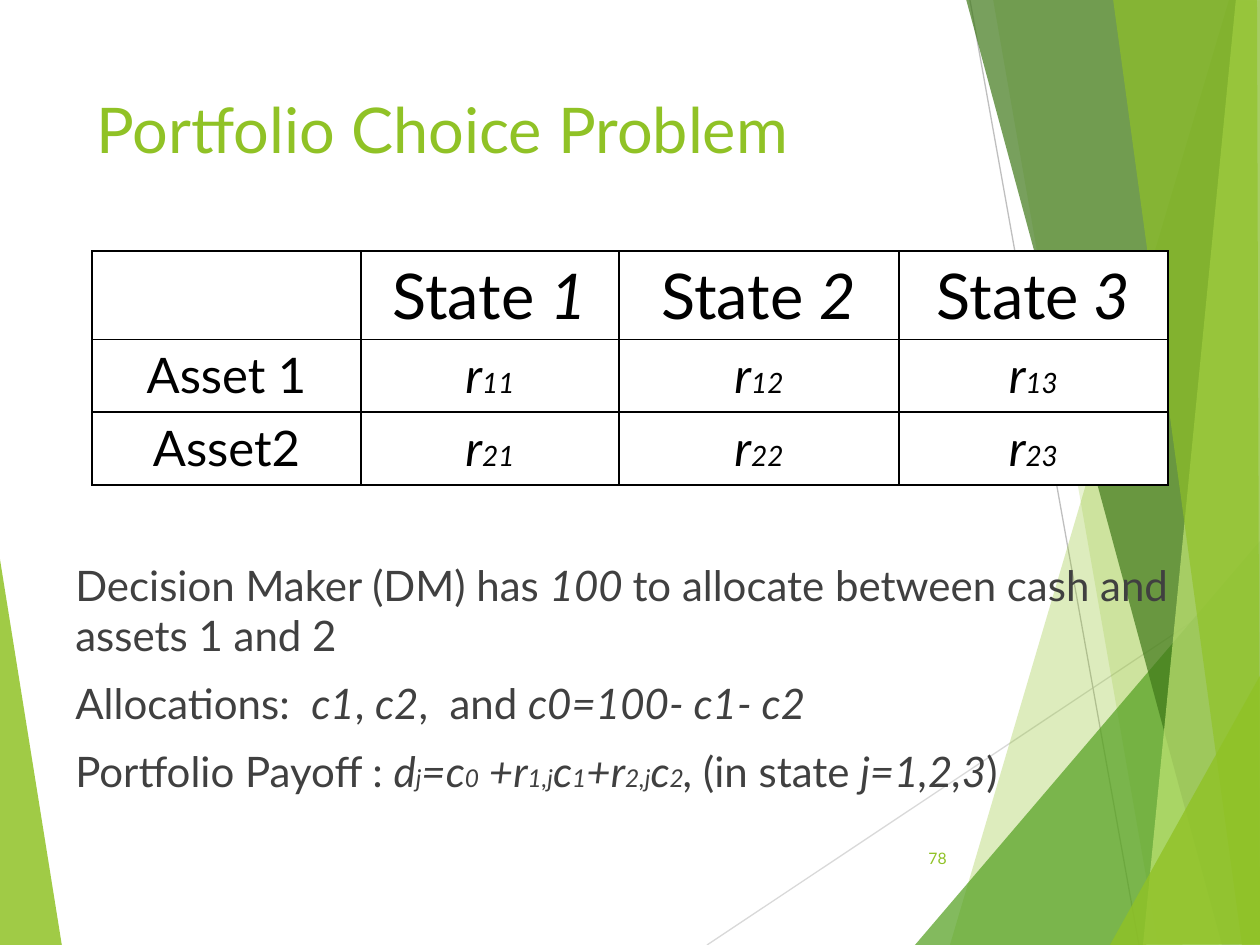
from lxml import etree
from pptx import Presentation
from pptx.dml.color import RGBColor
from pptx.enum.shapes import MSO_CONNECTOR
from pptx.enum.text import MSO_ANCHOR, MSO_AUTO_SIZE, PP_ALIGN
from pptx.oxml.ns import qn
from pptx.util import Emu, Pt

SCALE = 914400 / 126
STRAIGHT = MSO_CONNECTOR.STRAIGHT
LEFT, CENTER, RIGHT = PP_ALIGN.LEFT, PP_ALIGN.CENTER, PP_ALIGN.RIGHT
TOP, MIDDLE = MSO_ANCHOR.TOP, MSO_ANCHOR.MIDDLE
FIXED = MSO_AUTO_SIZE.NONE
FONT, GREEN, GRAY, BLACK, WHITE = "Lato", "90C226", "404040", "000000", "FFFFFF"

RAYS = [
    ("D9D9D9", (707, 945, 1261, 576)),
    ("BFBFBF", (970, 0, 1139, 945)),
]
WEDGE = (GREEN, 85, [(-1, 553), (62, 946), (-1, 945)])
SHARDS = [
    (GREEN, 30, [(1229, 0), (950, 945), (1263, 946), (1261, 1)]),
    (GREEN, 20, [(993, -1), (1158, 945), (1261, 945), (1261, -1)]),
    ("54A021", 72, [(915, 945), (1260, 541), (1261, 945)]),
    ("3F7819", 70, [(966, -1), (1222, 945), (1261, 944), (1261, -1)]),
    ("C0E474", 70, [(1236, -1), (1143, 945), (1261, 945), (1260, -1)]),
    (GREEN, 65, [(1113, -1), (1242, 945), (1260, 945), (1257, -1)]),
    (GREEN, 80, [(1110, 945), (1261, 674), (1261, 944)]),
]
COLS, ROWS = [269, 258, 280, 269], [88, 73, 73]
STATES = ["", "State |1", "State |2", "State| 3"]
ASSETS = ["Asset 1", "Asset2"]
NOTES = [
    "Decision Maker (DM) has |100 |to allocate between cash and assets 1 and 2",
    "Allocations:  |c1|, |c2|,  and |c0=100- c1- c2",
    "Portfolio Payoff : |d_j_=c_0_ +r_1,j_c_1_+r_2,j_c_2_, |(in state |j=1,2,3|)",
]


def px(num):
    """Turn pixels into EMU."""
    return Emu(round(num * SCALE))


def hue(code):
    """Turn a hex string into a colour."""
    return RGBColor.from_string(code)


def write(frame, *lines, size=24, small=14, color=GRAY, align=LEFT, anchor=TOP, gap=0):
    """Write lines in which | toggles italics and _ toggles small type."""
    frame.word_wrap = True
    frame.vertical_anchor = anchor
    for num, line in enumerate(lines):
        para = frame.add_paragraph() if num else frame.paragraphs[0]
        para.alignment = align
        para.space_after = Pt(gap)
        for slant, part in enumerate(line.split("|")):
            for low, bit in enumerate(part.split("_")):
                if bit:
                    run = para.add_run()
                    run.text = bit
                    font = run.font
                    font.name = FONT
                    font.size = Pt(small if low % 2 else size)
                    font.italic = slant % 2 == 1
                    font.color.rgb = hue(color)


def add_text(slide, box, *lines, **form):
    """Add a text box with formatted lines."""
    shape = slide.shapes.add_textbox(*map(px, box))
    write(shape.text_frame, *lines, **form)


def add_shard(slide, color, alpha, points):
    """Add a see-through polygon."""
    pen = slide.shapes.build_freeform(*points[0], scale=SCALE)
    pen.add_line_segments(points[1:], close=True)
    shape = pen.convert_to_shape()
    shape.shadow.inherit = False
    shape.line.fill.background()
    shape.fill.solid()
    shape.fill.fore_color.rgb = hue(color)
    tint = shape.element.spPr.find(qn("a:solidFill"))[0]
    etree.SubElement(tint, qn("a:alpha"), val=str(alpha * 1000))


def add_ray(slide, color, ends):
    """Add a thin straight line."""
    ray = slide.shapes.add_connector(STRAIGHT, *map(px, ends))
    ray.line.color.rgb = hue(color)
    ray.line.width = Pt(0.75)
    etree.SubElement(ray.element.spPr, qn("a:effectLst"))


def add_title(slide, text):
    """Place the title in front of the shapes drawn so far."""
    title = slide.shapes.title
    title.left, title.top, title.width, title.height = map(px, (84, 84, 874, 181))
    title.text_frame.auto_size = FIXED
    write(title.text_frame, text, size=36, color=GREEN)
    title.element.getparent().append(title.element)


def set_edges(cell):
    """Draw a black line on all four sides of a cell."""
    props = cell._tc.get_or_add_tcPr()
    for num, side in enumerate("LRTB"):
        edge = etree.Element(qn("a:ln" + side), w=str(Pt(1)))
        fill = etree.SubElement(edge, qn("a:solidFill"))
        etree.SubElement(fill, qn("a:srgbClr"), val=BLACK)
        props.insert(num, edge)


def add_grid(slide):
    """Add the table of asset returns by state."""
    box = (92, 251, sum(COLS), sum(ROWS))
    table = slide.shapes.add_table(len(ROWS), len(COLS), *map(px, box)).table
    table.first_row = table.horz_banding = False
    for col, width in zip(table.columns, COLS):
        col.width = px(width)
    for row, height in zip(table.rows, ROWS):
        row.height = px(height)
    rows = [STATES]
    for num, name in enumerate(ASSETS, 1):
        rows.append([name] + [f"|r_{num}{state}_" for state in (1, 2, 3)])
    for r, row in enumerate(rows):
        for c, text in enumerate(row):
            cell = table.cell(r, c)
            cell.fill.solid()
            cell.fill.fore_color.rgb = hue(WHITE)
            set_edges(cell)
            write(cell.text_frame, text, size=28 if r else 36, small=16,
                  color=BLACK, align=CENTER)


def main():
    """Build and save the slide."""
    deck = Presentation()
    deck.slide_width, deck.slide_height = px(1260), px(945)
    slide = deck.slides.add_slide(deck.slide_layouts[5])
    add_shard(slide, *WEDGE)
    for ray in RAYS:
        add_ray(slide, *ray)
    for shard in SHARDS:
        add_shard(slide, *shard)
    add_title(slide, "Portfolio Choice Problem")
    add_text(slide, (63, 553, 1134, 260), *NOTES, gap=10)
    add_text(slide, (888, 833, 71, 50), "78", size=9, color=GREEN,
             align=RIGHT, anchor=MIDDLE)
    add_grid(slide)
    deck.save("out.pptx")


if __name__ == "__main__":
    main()
